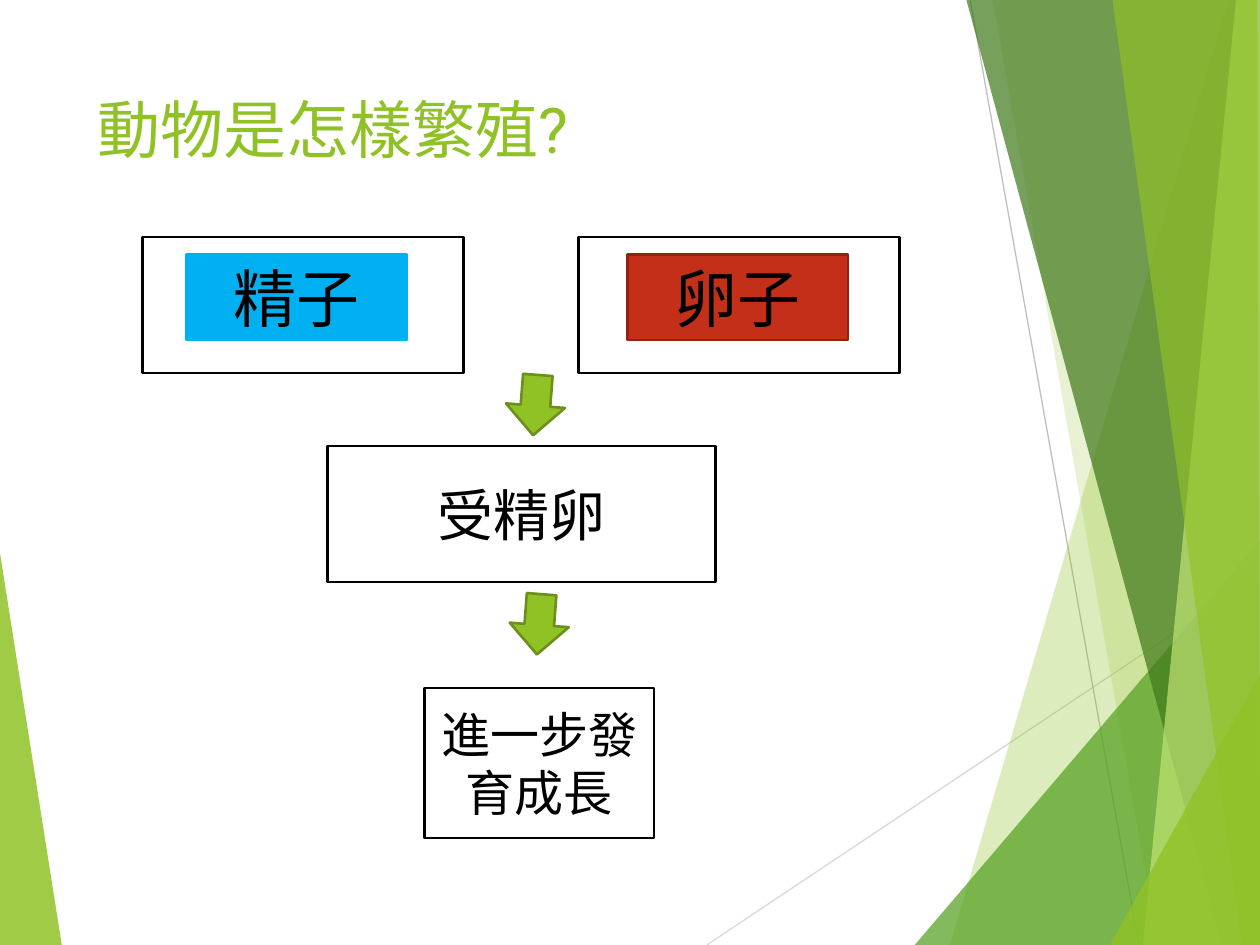
from lxml.etree import SubElement
from pptx import Presentation
from pptx.dml.color import RGBColor
from pptx.enum.shapes import MSO_CONNECTOR, MSO_SHAPE
from pptx.enum.text import MSO_ANCHOR, PP_ALIGN
from pptx.oxml.ns import qn
from pptx.util import Inches, Pt

COLOURS = {
    "lime": "90C226", "lime_edge": "6B901C", "pale_lime": "C0E474",
    "green": "54A021", "dark_green": "3F7819",
    "light_grey": "D9D9D9", "grey": "BFBFBF",
    "white": "FFFFFF", "black": "000000",
    "blue": "00B0F0", "red": "C42F1A", "dark_red": "912313",
}
WIDTH, HEIGHT = 10, 7.5

# Corner points, colour and opacity in percent, from back to front
LEFT_FACET = ([(0, 4.39), (0.49, HEIGHT), (0, HEIGHT)], "lime", 85)
RIGHT_FACETS = [
    ([(9.75, 0), (7.54, HEIGHT), (WIDTH, HEIGHT), (WIDTH, 0)], "lime", 30),
    ([(7.88, 0), (9.19, HEIGHT), (WIDTH, HEIGHT), (WIDTH, 0)], "lime", 20),
    ([(7.26, HEIGHT), (WIDTH, 4.29), (WIDTH, HEIGHT)], "green", 72),
    ([(7.67, 0), (9.7, HEIGHT), (WIDTH, HEIGHT), (WIDTH, 0)], "dark_green", 70),
    ([(9.81, 0), (9.07, HEIGHT), (WIDTH, HEIGHT), (WIDTH, 0)], "pale_lime", 70),
    ([(8.83, 0), (9.86, HEIGHT), (WIDTH, HEIGHT), (9.98, 0)], "lime", 65),
    ([(8.81, HEIGHT), (WIDTH, 5.35), (WIDTH, HEIGHT)], "lime", 80),
]
RAYS = [((5.61, HEIGHT), (WIDTH, 4.57), "light_grey"),
        ((7.7, 0), (9.04, HEIGHT), "grey")]


def colour(name):
    return RGBColor.from_string(COLOURS[name])


def paint(shape, fill, line):
    shape.shadow.inherit = False
    shape.fill.solid()
    shape.fill.fore_color.rgb = colour(fill)
    if line:
        shape.line.color.rgb = colour(line)
        shape.line.width = Pt(1.5)
    else:
        shape.line.fill.background()


def write(shape, text, align, anchor, font):
    frame = shape.text_frame
    frame.word_wrap = True
    frame.vertical_anchor = anchor
    para = frame.paragraphs[0]
    para.alignment = align
    span = para.add_run()
    span.text = text
    for name, value in font.items():
        if name == "color":
            span.font.color.rgb = colour(value)
        else:
            setattr(span.font, name, value)


def add_facet(page, points, fill, opacity):
    corners = [(Inches(x), Inches(y)) for x, y in points]
    builder = page.shapes.build_freeform(*corners[0])
    builder.add_line_segments(corners[1:], close=True)
    facet = builder.convert_to_shape()
    paint(facet, fill, None)
    tint = facet.fill._xPr.find(qn("a:solidFill"))[0]
    SubElement(tint, qn("a:alpha")).set("val", str(opacity * 1000))


def add_ray(page, start, end, tone):
    ray = page.shapes.add_connector(
        MSO_CONNECTOR.STRAIGHT, *(Inches(value) for value in start + end))
    ray.line.color.rgb = colour(tone)
    ray.line.width = Pt(0.75)
    SubElement(ray._element.spPr, qn("a:effectLst"))


def add_backdrop(page):
    add_facet(page, *LEFT_FACET)
    for ray in RAYS:
        add_ray(page, *ray)
    for facet in RIGHT_FACETS:
        add_facet(page, *facet)


def add_title(page, box, text):
    title = page.shapes.title
    for name, value in zip(("left", "top", "width", "height"), box):
        setattr(title, name, Inches(value))
    write(title, text, PP_ALIGN.LEFT, MSO_ANCHOR.TOP,
          {"size": Pt(36), "name": "Roboto", "color": "lime"})


def add_box(page, box, fill="white", line="black", text=None, size=36,
            face="Times New Roman"):
    shape = page.shapes.add_shape(
        MSO_SHAPE.RECTANGLE, *(Inches(value) for value in box))
    paint(shape, fill, line)
    if text:
        write(shape, text, PP_ALIGN.CENTER, MSO_ANCHOR.MIDDLE,
              {"size": Pt(size), "name": face, "color": "black"})


def add_parent_cell(page, box, label_offset, text, fill, line):
    """Draw an outlined frame with a coloured label inside it."""
    left, top, _, _ = box
    add_box(page, box)
    add_box(page, (left + label_offset, top + 0.14, 1.75, 0.68), fill, line,
            text, face="Noto Sans CJK SC")


def add_down_arrow(page, left, top):
    arrow = page.shapes.add_shape(MSO_SHAPE.RIGHT_ARROW, Inches(left),
                                  Inches(top), Inches(0.48), Inches(0.47))
    arrow.rotation = 94.4
    paint(arrow, "lime", "lime_edge")


def add_flow(page, left, top):
    """Draw the steps from parent cells to growth, from a top left corner."""
    add_parent_cell(page, (left, top, 2.55, 1.08), 0.35, "精子", "blue", "blue")
    add_parent_cell(page, (left + 3.46, top, 2.55, 1.08), 0.39, "卵子",
                    "red", "dark_red")
    add_box(page, (left + 1.47, top + 1.66, 3.08, 1.08), text="受精卵", size=32)
    add_box(page, (left + 2.24, top + 3.58, 1.82, 1.19),
            text="進一步發育成長", size=28)
    add_down_arrow(page, left + 2.88, top + 1.1)
    add_down_arrow(page, left + 2.91, top + 2.84)


def main():
    deck = Presentation()
    deck.slide_width, deck.slide_height = Inches(WIDTH), Inches(HEIGHT)
    page = deck.slides.add_slide(deck.slide_layouts.get_by_name("Title Only"))
    add_backdrop(page)
    add_title(page, (0.67, 0.67, 6.94, 1.44), "動物是怎樣繁殖?")
    add_flow(page, 1.13, 1.88)
    deck.save("out.pptx")


if __name__ == "__main__":
    main()
